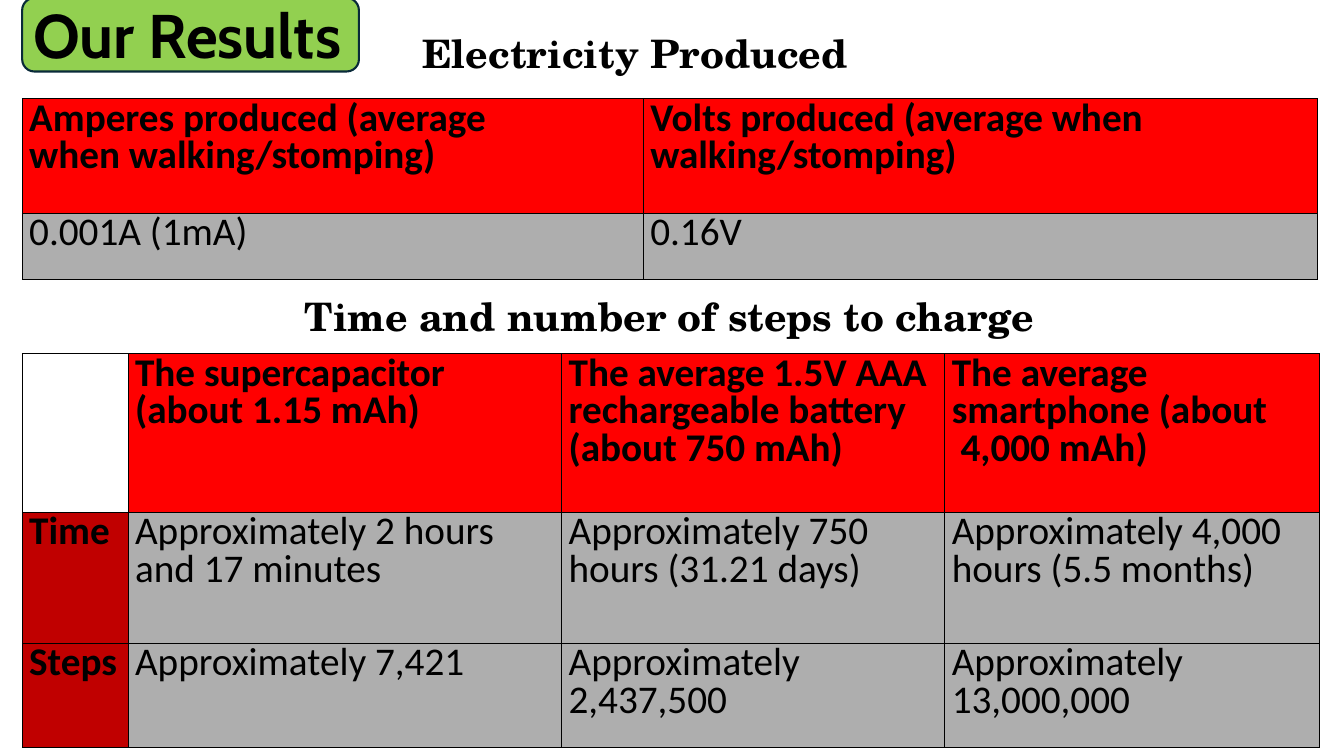
from dataclasses import dataclass

from lxml import etree
from pptx import Presentation
from pptx import util as u
from pptx.dml.color import RGBColor
from pptx.enum import shapes, text
from pptx.oxml import ns


@dataclass(frozen=True)
class Theme:
    ink: str = "000000"
    badge: str = "92D050"
    badge_line: str = "092A39"
    head: str = "FF0000"
    side: str = "C00000"
    body: str = "AEAEAE"
    title_font: str = "Cabin"
    heading_font: str = "TeX Gyre Schola"
    table_font: str = "Calibri"
    title_size: int = 44
    size: int = 28
    leading: int = 27


T = Theme()

PRODUCED = [
    ["Amperes produced (average\nwhen walking/stomping)",
     "Volts produced (average when\nwalking/stomping)"],
    ["0.001A (1mA)", "0.16V"],
]
CHARGING = [
    ["", "The supercapacitor\n(about 1.15 mAh)",
     "The average 1.5V AAA\nrechargeable battery\n(about 750 mAh)",
     "The average\nsmartphone (about\n 4,000 mAh)"],
    ["Time", "Approximately 2 hours\nand 17 minutes",
     "Approximately 750\nhours (31.21 days)",
     "Approximately 4,000\nhours (5.5 months)"],
    ["Steps", "Approximately 7,421", "Approximately\n2,437,500",
     "Approximately\n13,000,000"],
]


def add_run(p, words, font, size, bold=True):
    r = p.add_run()
    r.text = words
    r.font.name, r.font.size, r.font.bold = font, u.Pt(size), bold
    r.font.color.rgb = RGBColor.from_string(T.ink)


def add_title(s, left, top, width, height):
    # Green badge behind the title
    badge = s.shapes.add_shape(shapes.MSO_SHAPE.ROUNDED_RECTANGLE, u.Inches(left),
                               u.Inches(top), u.Inches(width), u.Inches(height))
    badge.shadow.inherit = False
    badge.fill.solid()
    badge.fill.fore_color.rgb = RGBColor.from_string(T.badge)
    badge.line.color.rgb = RGBColor.from_string(T.badge_line)
    badge.line.width = u.Pt(1.5)

    # Title, centred on the badge's height and brought in front of it
    title = s.shapes.title
    title.left, title.top = u.Inches(left + 0.01), u.Inches(top - 0.32)
    title.width, title.height = u.Inches(11.5), u.Inches(1.45)
    badge._element.addnext(title._element)
    tf = title.text_frame
    tf.auto_size = text.MSO_AUTO_SIZE.NONE
    tf.vertical_anchor = text.MSO_ANCHOR.MIDDLE
    p = tf.paragraphs[0]
    p.alignment = text.PP_ALIGN.LEFT
    p.line_spacing = 0.9
    add_run(p, "Our Results", T.title_font, T.title_size)


def add_heading(s, words, left, top, width):
    sp = s.shapes.add_textbox(u.Inches(left), u.Inches(top),
                              u.Inches(width), u.Inches(0.57))
    tf = sp.text_frame
    tf.word_wrap = True
    tf.auto_size = text.MSO_AUTO_SIZE.SHAPE_TO_FIT_TEXT
    add_run(tf.paragraphs[0], words, T.heading_font, T.size)


def add_borders(cell):
    tc_pr = cell._tc.get_or_add_tcPr()
    for side in ("a:lnL", "a:lnR", "a:lnT", "a:lnB"):
        line = etree.SubElement(tc_pr, ns.qn(side), w=str(u.Pt(0.75)))
        fill = etree.SubElement(line, ns.qn("a:solidFill"))
        etree.SubElement(fill, ns.qn("a:srgbClr"), val=T.ink)


def fill_cell(cell, words, colour, bold):
    cell.margin_left = cell.margin_right = u.Inches(0.07)
    cell.margin_top = cell.margin_bottom = u.Inches(0.05)
    add_borders(cell)
    if not words:
        cell.fill.background()
        return
    cell.fill.solid()
    cell.fill.fore_color.rgb = RGBColor.from_string(colour)
    tf = cell.text_frame
    for i, line in enumerate(words.split("\n")):
        p = tf.add_paragraph() if i else tf.paragraphs[0]
        p.line_spacing = u.Pt(T.leading)
        add_run(p, line, T.table_font, T.size, bold)


def add_results(s, rows, left, top, widths, heights, side_heads=False):
    frame = s.shapes.add_table(len(rows), len(widths), u.Inches(left), u.Inches(top),
                               u.Inches(sum(widths)), u.Inches(sum(heights)))
    table = frame.table
    table.first_row = table.horz_banding = False
    for column, width in zip(table.columns, widths):
        column.width = u.Inches(width)
    for r, row in enumerate(rows):
        table.rows[r].height = u.Inches(heights[r])
        for c, words in enumerate(row):
            is_side = side_heads and c == 0
            colour = T.head if r == 0 else T.side if is_side else T.body
            fill_cell(table.cell(r, c), words, colour, r == 0 or is_side)


def main():
    prs = Presentation()
    prs.slide_width, prs.slide_height = u.Inches(13.33), u.Inches(7.5)
    s = prs.slides.add_slide(prs.slide_layouts[5])
    left = 0.22

    add_title(s, left, -0.02, 3.34, 0.73)

    # Electricity produced
    add_results(s, PRODUCED, left, 0.98, [6.16, 6.69], [1.14, 0.65])
    add_heading(s, "Electricity Produced", 4.09, 0.24, 9)

    # Time and steps to charge
    add_results(s, CHARGING, left, 3.51, [1.05, 4.3, 3.8, 3.72],
                [1.57, 1.3, 1.04], side_heads=True)
    add_heading(s, "Time and number of steps to charge", 2.92, 2.85, 8.26)

    prs.save("out.pptx")


if __name__ == "__main__":
    main()
